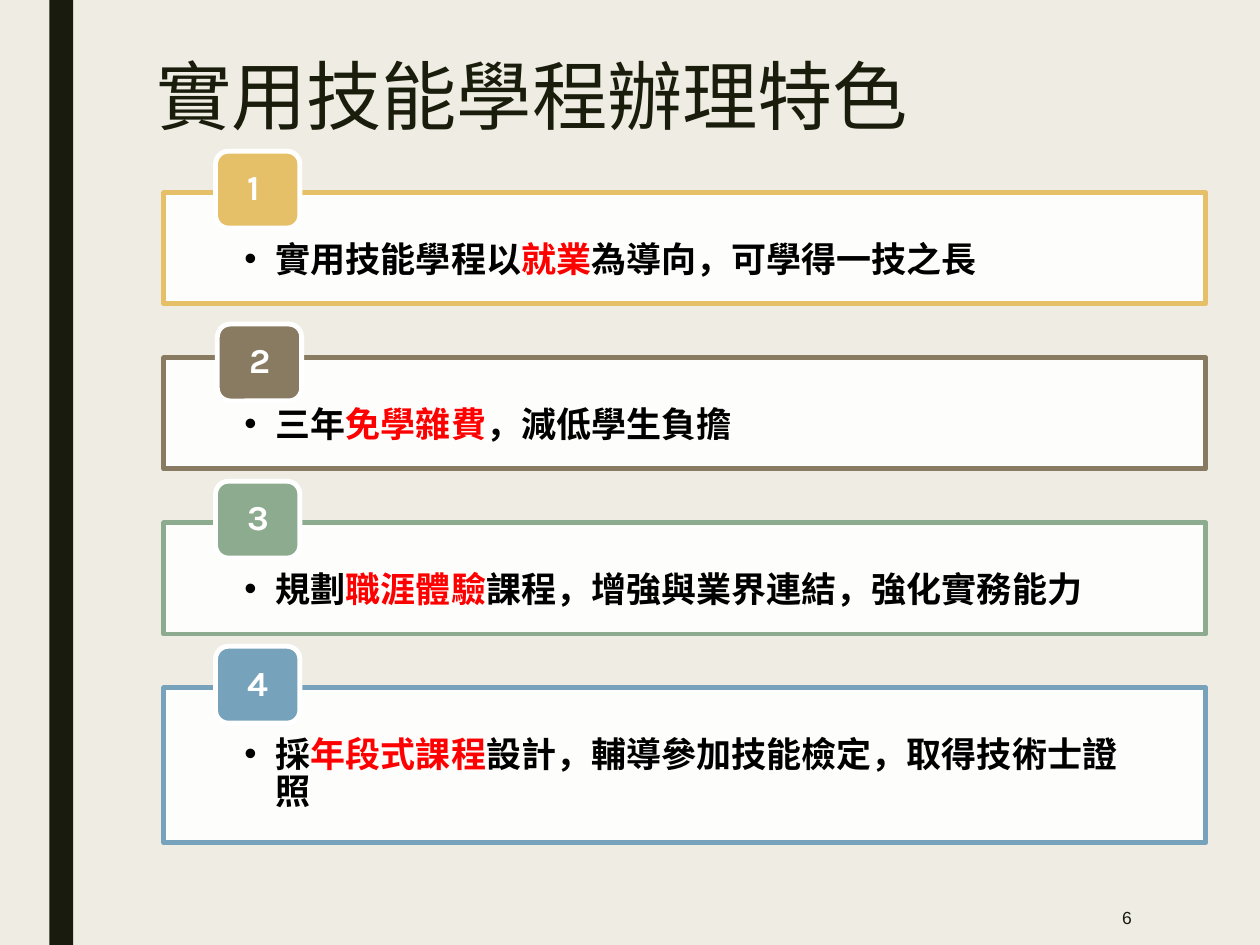
from lxml import etree
from pptx import Presentation
from pptx.dml.color import RGBColor
from pptx.enum.shapes import MSO_SHAPE
from pptx.enum.text import MSO_ANCHOR, PP_ALIGN
from pptx.oxml.ns import qn
from pptx.util import Pt

RECT, ROUNDED = MSO_SHAPE.RECTANGLE, MSO_SHAPE.ROUNDED_RECTANGLE
TOP, MIDDLE = MSO_ANCHOR.TOP, MSO_ANCHOR.MIDDLE
LEFT, RIGHT = PP_ALIGN.LEFT, PP_ALIGN.RIGHT

TITLE = "實用技能學程辦理特色"
PAGE_NUMBER = "6"
FEATURES = [
    {"color": "E6C069", "height": 63.5, "nudge": (0, 0),
     "text": ("實用技能學程以", "就業", "為導向，可學得一技之長")},
    {"color": "897B61", "height": 63.5, "nudge": (1, 4.5),
     "text": ("三年", "免學雜費", "，減低學生負擔")},
    {"color": "8DAB8E", "height": 63.5, "nudge": (0, 0),
     "text": ("規劃", "職涯體驗", "課程，增強與業界連結，強化實務能力")},
    {"color": "77A2BB", "height": 88.5, "nudge": (0, 0),
     "text": ("採", "年段式課程", "設計，輔導參加技能檢定，取得技術士證照")},
]

THEME = {
    "background": "EFEDE3", "dark": "191B0E", "title": "1A1D0C",
    "panel": "FFFFFF", "text": "000000", "accent": "FF0000",
    "title_font": "Noto Sans CJK SC", "body_font": "Karla", "number_font": "Arial",
    "title_size": 43, "body_size": 20, "number_size": 10, "border": 2.75,
}
PANEL_LEFT, PANEL_TOP, PANEL_WIDTH, PANEL_STEP = 93.6, 110.2, 595.5, 94.3
BADGE_LEFT, BADGE_RISE, BADGE_WIDTH, BADGE_HEIGHT = 123.2, 23.8, 48.2, 43.9


def color(name):
    return RGBColor.from_string(THEME.get(name, name))


def set_all(target, values):
    for key, value in values.items():
        setattr(target, key, value)


def add_block(page, kind, bounds, fill, line=None):
    box = page.shapes.add_shape(kind, *map(Pt, bounds))
    box.shadow.inherit = False
    box.fill.solid()
    box.fill.fore_color.rgb = color(fill)
    if line:
        box.line.color.rgb = color(line)
        box.line.width = Pt(THEME["border"])
    else:
        box.line.fill.background()
    return box


def format_frame(box, anchor, insets, align=LEFT, spacing=0.9):
    frame = box.text_frame
    sides = ("margin_left", "margin_top", "margin_right", "margin_bottom")
    set_all(frame, dict(zip(sides, map(Pt, insets))))
    set_all(frame, {"word_wrap": True, "vertical_anchor": anchor})
    para = frame.paragraphs[0]
    set_all(para, {"alignment": align, "line_spacing": spacing})
    return para


def add_span(para, text, role, ink, bold=False):
    span = para.add_run()
    span.text = text
    set_all(span.font, {"name": THEME[role + "_font"],
                        "size": Pt(THEME[role + "_size"]), "bold": bold})
    span.font.color.rgb = color(ink)
    return span


def add_bullet(para):
    settings = para._p.get_or_add_pPr()
    settings.set("marL", str(Pt(18)))
    settings.set("indent", str(-Pt(18)))
    etree.SubElement(settings, qn("a:buFont"), typeface="Arial")
    etree.SubElement(settings, qn("a:buChar"), char="•")


def add_title(page):
    box = page.shapes.title
    bounds = map(Pt, (82, 21, 595.5, 72.7))
    set_all(box, dict(zip(("left", "top", "width", "height"), bounds)))
    para = format_frame(box, MIDDLE, (7.2, 3.6, 7.2, 3.6))
    span = add_span(para, TITLE, "title", "title")
    settings = span._r.get_or_add_rPr()
    effects = etree.Element(qn("a:effectLst"))
    shadow = etree.SubElement(effects, qn("a:outerShdw"),
                              dist=str(Pt(3)), dir="2700000", algn="tl")
    etree.SubElement(shadow, qn("a:srgbClr"), val=THEME["panel"])
    settings.find(qn("a:solidFill")).addnext(effects)
    east_asian = etree.Element(qn("a:ea"), typeface=THEME["title_font"])
    settings.find(qn("a:latin")).addnext(east_asian)


def add_feature(page, index, feature):
    top = PANEL_TOP + index * PANEL_STEP
    panel = add_block(page, RECT, (PANEL_LEFT, top, PANEL_WIDTH, feature["height"]),
                      "panel", feature["color"])
    fill = panel.fill._xPr.find(qn("a:solidFill"))
    etree.SubElement(fill[0], qn("a:alpha"), val="90000")
    para = format_frame(panel, TOP, (46, 28, 46, 11.5))
    add_bullet(para)
    for text, ink in zip(feature["text"], ("text", "accent", "text")):
        add_span(para, text, "body", ink, True)

    shift_x, shift_y = feature["nudge"]
    badge = add_block(page, ROUNDED,
                      (BADGE_LEFT + shift_x, top - BADGE_RISE + shift_y,
                       BADGE_WIDTH, BADGE_HEIGHT), feature["color"], "panel")
    para = format_frame(badge, MIDDLE, (16, 0, 16, 0))
    add_span(para, str(index + 1), "body", "panel", True)


def add_page_number(page):
    box = page.shapes.add_textbox(*map(Pt, (559.5, 508.3, 94.3, 31.7)))
    para = format_frame(box, MIDDLE, (7.2, 3.6, 7.2, 3.6), RIGHT, 1.0)
    add_span(para, PAGE_NUMBER, "number", "dark")


def main():
    deck = Presentation()
    set_all(deck, {"slide_width": Pt(720), "slide_height": Pt(540)})
    page = deck.slides.add_slide(deck.slide_layouts[5])
    page.background.fill.solid()
    page.background.fill.fore_color.rgb = color("background")
    add_block(page, RECT, (28.3, 0, 13.5, 540), "dark")
    add_page_number(page)
    for index, feature in enumerate(FEATURES):
        add_feature(page, index, feature)
    add_title(page)
    deck.save("out.pptx")


if __name__ == "__main__":
    main()
